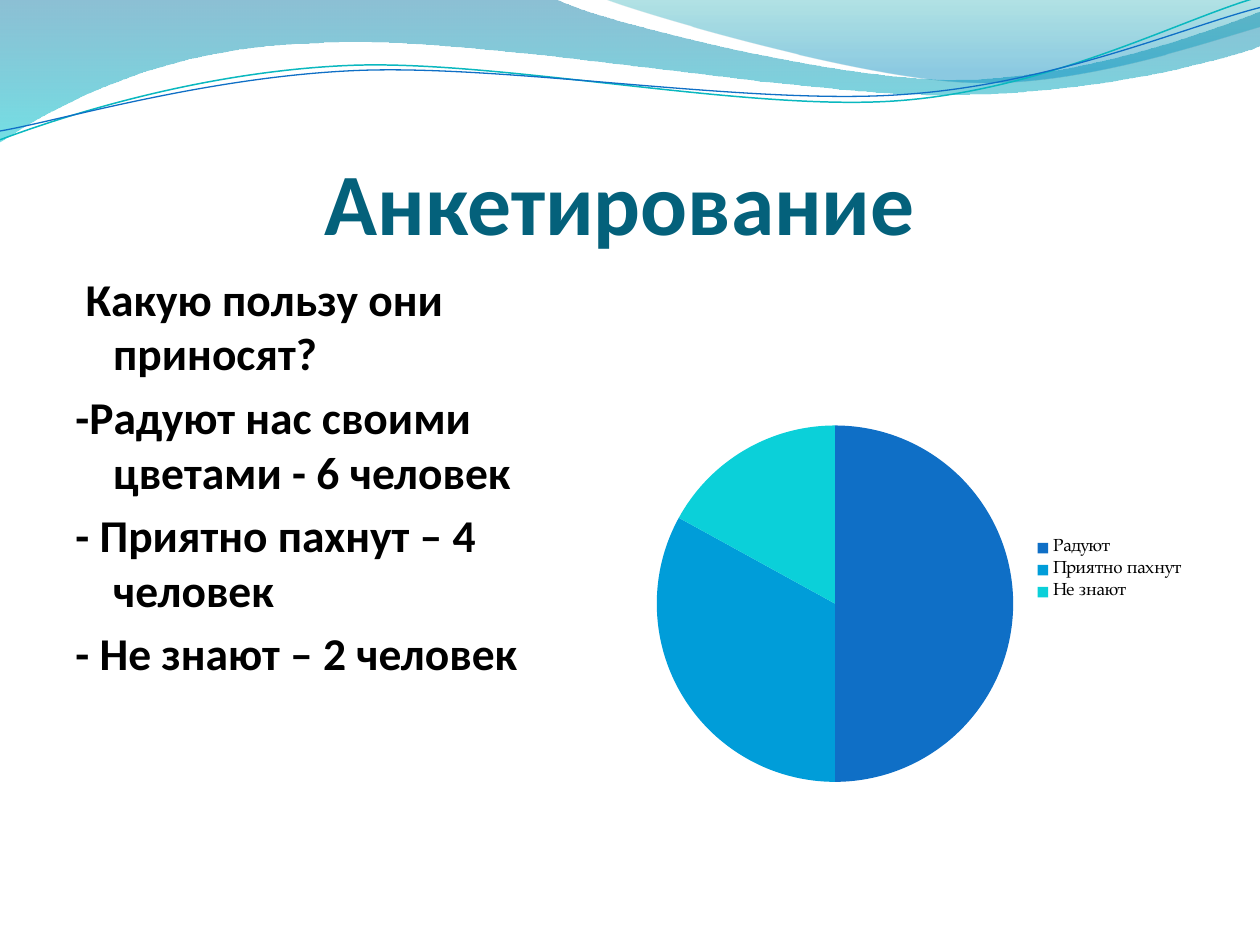
from lxml import etree
from pptx import Presentation
from pptx.chart.data import CategoryChartData
from pptx.dml.color import RGBColor
from pptx.enum.chart import XL_CHART_TYPE, XL_LEGEND_POSITION
from pptx.enum.text import MSO_ANCHOR, PP_ALIGN
from pptx.oxml.ns import qn
from pptx.util import Inches, Pt

PIE = XL_CHART_TYPE.PIE
LEGEND_RIGHT = XL_LEGEND_POSITION.RIGHT
TOP, BOTTOM = MSO_ANCHOR.TOP, MSO_ANCHOR.BOTTOM
LEFT, CENTER = PP_ALIGN.LEFT, PP_ALIGN.CENTER

LARGE_WAVE = [
    (0, 0), (4.4, -0.01),
    (4.76, 0.17, 6.64, 0.63, 7.58, 0.63), (8.53, 0.63, 9.58, 0.26, 10, 0.09),
    (10.01, 0.36),
    (9.83, 0.44, 8.7, 0.76, 7.46, 0.75), (6.22, 0.75, 3.82, 0.28, 2.57, 0.34),
    (1.29, 0.36, 0.46, 0.83, -0.01, 1.13),
]
SMALL_WAVE = [
    (4.79, -0.01),
    (5.09, 0.11, 6.82, 0.62, 7.69, 0.65), (8.56, 0.69, 9.61, 0.32, 10, 0.21),
    (10, 0),
]
TEAL_LINE = [
    (0, 1.11),
    (0.48, 0.93, 1.58, 0.57, 2.77, 0.52), (3.95, 0.47, 5.93, 0.89, 7.13, 0.8),
    (8.33, 0.71, 9.38, 0.15, 9.98, -0.02),
]
BLUE_LINE = [
    (0, 1.04),
    (0.47, 0.96, 1.64, 0.61, 2.83, 0.56), (4.03, 0.51, 5.97, 0.84, 7.17, 0.75),
    (8.36, 0.67, 9.41, 0.21, 10, 0.06),
]
ANSWERS = [
    " Какую пользу они приносят?",
    "-Радуют нас своими цветами - 6 человек",
    "- Приятно пахнут – 4 человек",
    "- Не знают – 2 человек",
]
SHARES = [("Радуют", 50, "0F6FC6"), ("Приятно пахнут", 33, "009DD9"), ("Не знают", 17, "0BD0D9")]


def color(value):
    return RGBColor.from_string(value)


def bend_segments(shape, segments):
    path = next(shape._element.iter(qn("a:path")))
    lines = iter(path.findall(qn("a:lnTo")))
    for segment in segments:
        controls = [next(lines) for _ in range(len(segment) // 2)]
        if len(controls) == 3:
            curve = etree.Element(qn("a:cubicBezTo"))
            controls[0].addprevious(curve)
            for control in controls:
                curve.append(control[0])
                path.remove(control)


def add_outline(slide, segments, close):
    points = [(Inches(segment[i]), Inches(segment[i + 1]))
              for segment in segments for i in range(0, len(segment), 2)]
    builder = slide.shapes.build_freeform(*points[0])
    builder.add_line_segments(points[1:], close=close)
    shape = builder.convert_to_shape()
    shape.shadow.inherit = False
    bend_segments(shape, segments[1:])
    return shape


def add_wave(slide, segments, stops):
    shape = add_outline(slide, segments, True)
    shape.line.fill.background()
    shape.fill.gradient()
    shape.fill.gradient_angle = 270
    for stop, (position, value, opacity) in zip(shape.fill.gradient_stops, stops):
        stop.position = position
        stop.color.rgb = color(value)
    color_elements = shape._element.spPr.iter(qn("a:srgbClr"))
    for element, (position, value, opacity) in zip(color_elements, stops):
        etree.SubElement(element, qn("a:alpha"), val=str(opacity * 1000))


def add_wave_line(slide, segments, value, width):
    shape = add_outline(slide, segments, False)
    shape.fill.background()
    shape.line.color.rgb = color(value)
    shape.line.width = Pt(width)


def add_text(slide, box, lines, size, value, align, anchor, side_inset=0.1, bottom_inset=0.05, hanging=0):
    frame = slide.shapes.add_textbox(*map(Inches, box)).text_frame
    frame.word_wrap = True
    frame.vertical_anchor = anchor
    frame.margin_left = frame.margin_right = Inches(side_inset)
    frame.margin_bottom = Inches(bottom_inset)
    for index, line in enumerate(lines):
        paragraph = frame.add_paragraph() if index else frame.paragraphs[0]
        paragraph.text = line
        paragraph.alignment = align
        if index:
            paragraph.space_before = Pt(size * 0.2)
        if hanging:
            properties = paragraph._p.get_or_add_pPr()
            properties.set("marL", str(Inches(hanging)))
            properties.set("indent", str(-Inches(hanging)))
        paragraph.font.name = "Calibri"
        paragraph.font.size = Pt(size)
        paragraph.font.bold = True
        paragraph.font.color.rgb = color(value)


def place_plot(chart, x, y, width, height):
    plot_area = chart._chartSpace.chart.plotArea
    for layout in plot_area.findall(qn("c:layout")):
        plot_area.remove(layout)
    layout = etree.Element(qn("c:layout"))
    plot_area.insert(0, layout)
    manual = etree.SubElement(layout, qn("c:manualLayout"))
    settings = [("layoutTarget", "inner"), ("xMode", "edge"), ("yMode", "edge"),
                ("x", x), ("y", y), ("w", width), ("h", height)]
    for name, setting in settings:
        etree.SubElement(manual, qn(f"c:{name}"), val=str(setting))


def add_pie(slide, box, shares):
    data = CategoryChartData()
    data.categories = [name for name, share, value in shares]
    data.add_series("Series 1", [share for name, share, value in shares])
    chart = slide.shapes.add_chart(PIE, *map(Inches, box), data).chart
    chart.has_title = False
    chart.has_legend = True
    chart.legend.position = LEGEND_RIGHT
    chart.legend.include_in_layout = False
    chart.font.name = "TeX Gyre Pagella"
    chart.font.size = Pt(10)
    chart.font.color.rgb = color("000000")
    for index, (name, share, value) in enumerate(shares):
        fill = chart.plots[0].series[0].points[index].format.fill
        fill.solid()
        fill.fore_color.rgb = color(value)
    place_plot(chart, 0.03, 0.26, 0.64, 0.59)


def main():
    presentation = Presentation()
    presentation.slide_width = Inches(10)
    presentation.slide_height = Inches(7.5)
    slide = presentation.slides.add_slide(presentation.slide_layouts[6])
    add_wave(slide, LARGE_WAVE, [(0, "0074A1", 45), (1, "00C6CF", 55)])
    add_wave(slide, SMALL_WAVE, [(0, "00A1A9", 30), (0.8, "008BBF", 45)])
    add_wave_line(slide, TEAL_LINE, "0AB8BF", 0.85)
    add_wave_line(slide, BLUE_LINE, "0F6FC6", 0.75)
    add_text(slide, (0.5, 0.76, 9, 1.25), ["Анкетирование "], 50, "04617B", CENTER, BOTTOM,
             side_inset=0, bottom_inset=0)
    add_text(slide, (0.5, 2.1, 4.42, 4.85), ANSWERS, 26, "000000", LEFT, TOP, hanging=0.3)
    add_pie(slide, (5.08, 2.1, 4.42, 4.85), SHARES)
    presentation.save("out.pptx")


if __name__ == "__main__":
    main()
